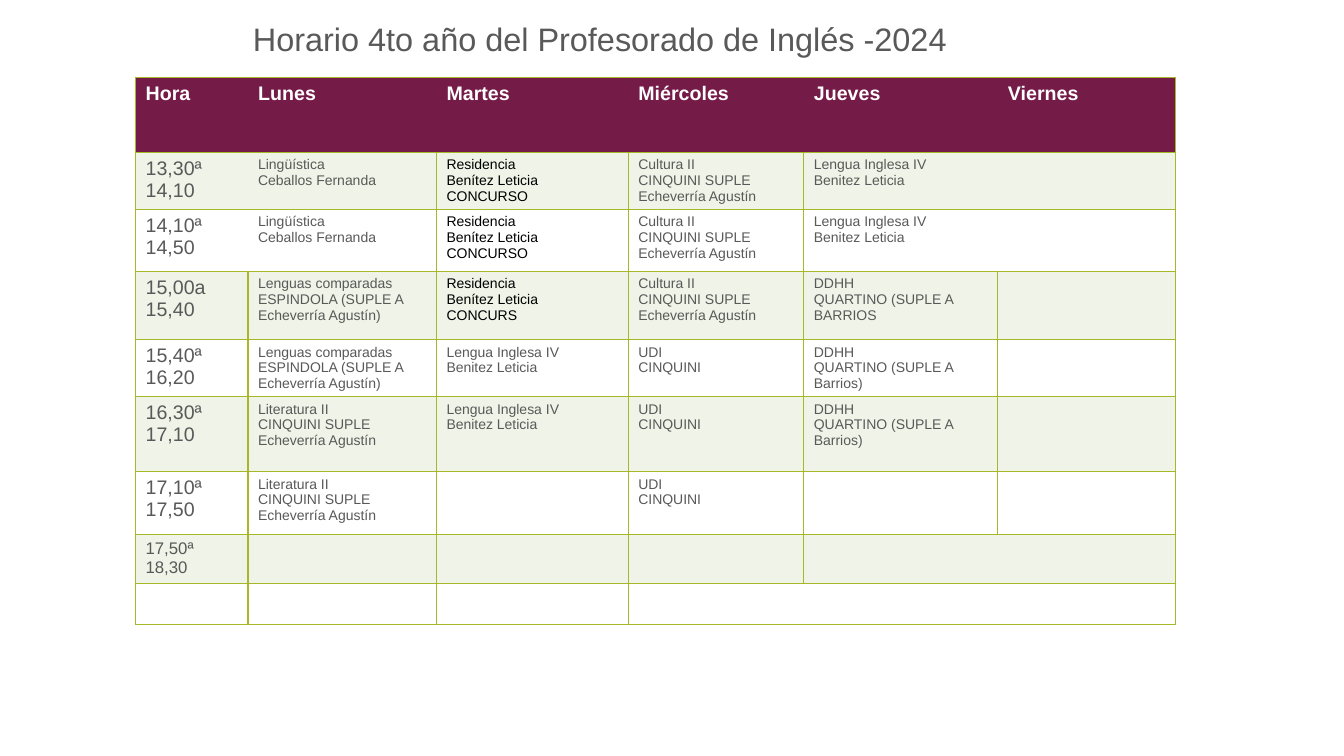
from pptx import Presentation
from pptx.dml.color import RGBColor
from pptx.enum import text
from pptx.oxml import parse_xml
from pptx.oxml.ns import nsdecls
from pptx.util import Pt

COLORS = {"header": "741B47", "band": "F0F3E7", "plain": "FFFFFF", "line": "A6B727",
          "text": "595959", "dark": "000000", "white": "FFFFFF"}
FONT = "Arial"
TITLE = "Horario 4to año del Profesorado de Inglés -2024"

LINGUISTICS = "Lingüística\nCeballos Fernanda"
RESIDENCY = "Residencia\nBenítez Leticia\nCONCURSO"
CULTURE = "Cultura II\nCINQUINI SUPLE\nEcheverría Agustín"
ENGLISH = "Lengua Inglesa IV\nBenitez Leticia"
COMPARED = "Lenguas comparadas\nESPINDOLA (SUPLE A\nEcheverría Agustín)"
LITERATURE = "Literatura II\nCINQUINI SUPLE\nEcheverría Agustín"
UDI = "UDI\nCINQUINI"
RIGHTS = "DDHH\nQUARTINO (SUPLE A Barrios)"

SCHEDULE = [
    ["Hora", "Lunes", "Martes", "Miércoles", "Jueves", "Viernes"],
    ["13,30ª\n14,10", LINGUISTICS, RESIDENCY, CULTURE, ENGLISH, ""],
    ["14,10ª\n14,50", LINGUISTICS, RESIDENCY, CULTURE, ENGLISH, ""],
    ["15,00a\n15,40", COMPARED, "Residencia\nBenítez Leticia\nCONCURS", CULTURE,
     "DDHH\nQUARTINO (SUPLE A BARRIOS", ""],
    ["15,40ª\n16,20", COMPARED, ENGLISH, UDI, RIGHTS, ""],
    ["16,30ª\n17,10", LITERATURE, ENGLISH, UDI, RIGHTS, ""],
    ["17,10ª\n17,50", LITERATURE, "", UDI, "", ""],
    ["17,50ª\n18,30", "", "", "", "", ""],
    ["", "", "", "", "", ""],
]
COLUMN_WIDTHS = [80.4, 134.6, 137, 125.4, 138.6, 127]
ROW_HEIGHTS = [53.5, 40.5, 44.3, 48.7, 40.5, 53.5, 45, 35, 28.8]
OPEN_SIDES = {0: {1, 2, 3, 4, 5}, 1: {1, 5}, 2: {1, 5}, 7: {5}, 8: {4, 5}}
LAST_COLUMN = len(COLUMN_WIDTHS)


def color(name):
    return RGBColor.from_string(COLORS[name])


def style(font, size, name, bold=False):
    font.name, font.size, font.bold = FONT, Pt(size), bold
    font.color.rgb = color(name)


def text_style(row, column, value):
    if row == 0:
        return 14, "white", True
    if column == 0:
        return (12 if row == 7 else 14), "text", False
    return 10, "dark" if value.startswith("Residencia") else "text", False


def draw_borders(cell, row, column):
    properties = cell._tc.get_or_add_tcPr()
    gaps = OPEN_SIDES.get(row, set())
    visible = {"lnL": column not in gaps, "lnR": column + 1 not in gaps,
               "lnT": True, "lnB": True}
    for position, (side, shown) in enumerate(visible.items()):
        paint = (f'<a:solidFill><a:srgbClr val="{COLORS["line"]}"/></a:solidFill>'
                 if shown else "<a:noFill/>")
        properties.insert(position, parse_xml(
            f'<a:{side} {nsdecls("a")} w="{Pt(1)}">{paint}</a:{side}>'))


def add_title(page):
    title = page.shapes.title
    title.left, title.top, title.width, title.height = Pt(173.5), Pt(13), Pt(738), Pt(62.6)
    frame = title.text_frame
    frame.text = TITLE
    frame.word_wrap = True
    frame.auto_size = text.MSO_AUTO_SIZE.NONE
    frame.vertical_anchor = text.MSO_ANCHOR.TOP
    para = frame.paragraphs[0]
    para.alignment = text.PP_ALIGN.LEFT
    para.line_spacing = 0.9
    style(para.runs[0].font, 23.2, "text")


def add_schedule(page):
    frame = page.shapes.add_table(len(SCHEDULE), LAST_COLUMN, Pt(96.8), Pt(55.3),
                                  Pt(sum(COLUMN_WIDTHS)), Pt(sum(ROW_HEIGHTS)))
    table = frame.table
    for column, width in zip(table.columns, COLUMN_WIDTHS):
        column.width = Pt(width)
    for row, height in zip(table.rows, ROW_HEIGHTS):
        row.height = Pt(height)
    for r, values in enumerate(SCHEDULE):
        fill = "header" if r == 0 else "band" if r % 2 else "plain"
        for c, value in enumerate(values):
            cell = table.cell(r, c)
            cell.fill.solid()
            cell.fill.fore_color.rgb = color(fill)
            draw_borders(cell, r, c)
            cell.text_frame.text = value
            for para in cell.text_frame.paragraphs:
                for span in para.runs:
                    style(span.font, *text_style(r, c, value))


def main():
    deck = Presentation()
    deck.slide_width, deck.slide_height = Pt(960), Pt(540)
    page = deck.slides.add_slide(deck.slide_layouts[5])
    add_title(page)
    add_schedule(page)
    deck.save("out.pptx")


if __name__ == "__main__":
    main()
